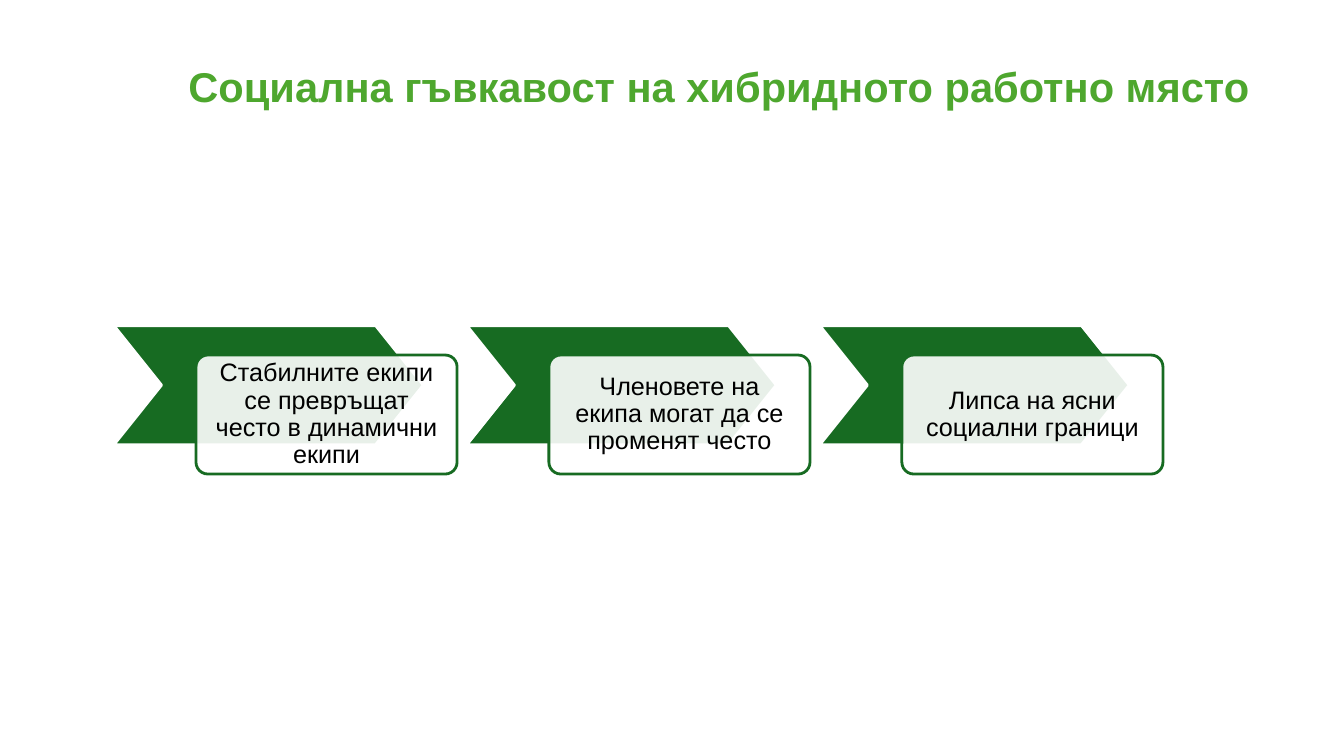
from lxml.etree import SubElement
from pptx import Presentation
from pptx.dml.color import RGBColor
from pptx.enum.shapes import MSO_SHAPE
from pptx.enum.text import MSO_ANCHOR, PP_ALIGN
from pptx.oxml.ns import qn
from pptx.util import Pt

GREEN = "176B22"
WHITE = "FFFFFF"


def color(hex_string):
    return RGBColor.from_string(hex_string)


def add_outlined_shape(page, kind, left, top, width, height, roundness, fill, line):
    shape = page.shapes.add_shape(kind, Pt(left), Pt(top), Pt(width), Pt(height))
    shape.adjustments[0] = roundness
    shape.shadow.inherit = False
    shape.fill.solid()
    shape.fill.fore_color.rgb = color(fill)
    shape.line.color.rgb = color(line)
    shape.line.width = Pt(2)
    return shape


deck = Presentation()
deck.slide_width, deck.slide_height = Pt(960), Pt(540)
page = deck.slides.add_slide(deck.slide_layouts[6])

# Title
title = page.shapes.add_textbox(Pt(127.5), Pt(51.8), Pt(825), Pt(56.2))
frame = title.text_frame
frame.word_wrap = True
frame.vertical_anchor = MSO_ANCHOR.MIDDLE
frame.margin_top, frame.margin_bottom = Pt(0), Pt(37)
para = frame.paragraphs[0]
para.text = "Социална гъвкавост на хибридното работно място"
para.font.name = "Arial"
para.font.size = Pt(29.7)
para.font.bold = True
para.font.color.rgb = color("4EA72E")

# Three chevrons, each with a translucent card on top
statements = [
    "Стабилните екипи се превръщат често в динамични екипи",
    "Членовете на екипа могат да се променят често",
    "Липса на ясни социални граници",
]
for index, statement in enumerate(statements):
    left = 81.4 + 252.1 * index
    add_outlined_shape(page, MSO_SHAPE.CHEVRON, left, 232.6, 221, 85, 0.4, GREEN, WHITE)
    card = add_outlined_shape(page, MSO_SHAPE.ROUNDED_RECTANGLE, left + 58.6, 253.6,
                              186.5, 85, 0.1, WHITE, GREEN)

    # Card opacity of 90 %
    fill_color = card.fill._xPr.find(qn("a:solidFill"))[0]
    SubElement(fill_color, qn("a:alpha"), val="90000")

    # Card text
    frame = card.text_frame
    frame.word_wrap = True
    frame.vertical_anchor = MSO_ANCHOR.MIDDLE
    frame.margin_left = frame.margin_right = Pt(10)
    frame.margin_top = frame.margin_bottom = Pt(10)
    para = frame.paragraphs[0]
    para.text = statement
    para.alignment = PP_ALIGN.CENTER
    para.line_spacing = 0.9
    para.font.name = "Arial"
    para.font.size = Pt(18)
    para.font.color.rgb = color("000000")

deck.save("out.pptx")
